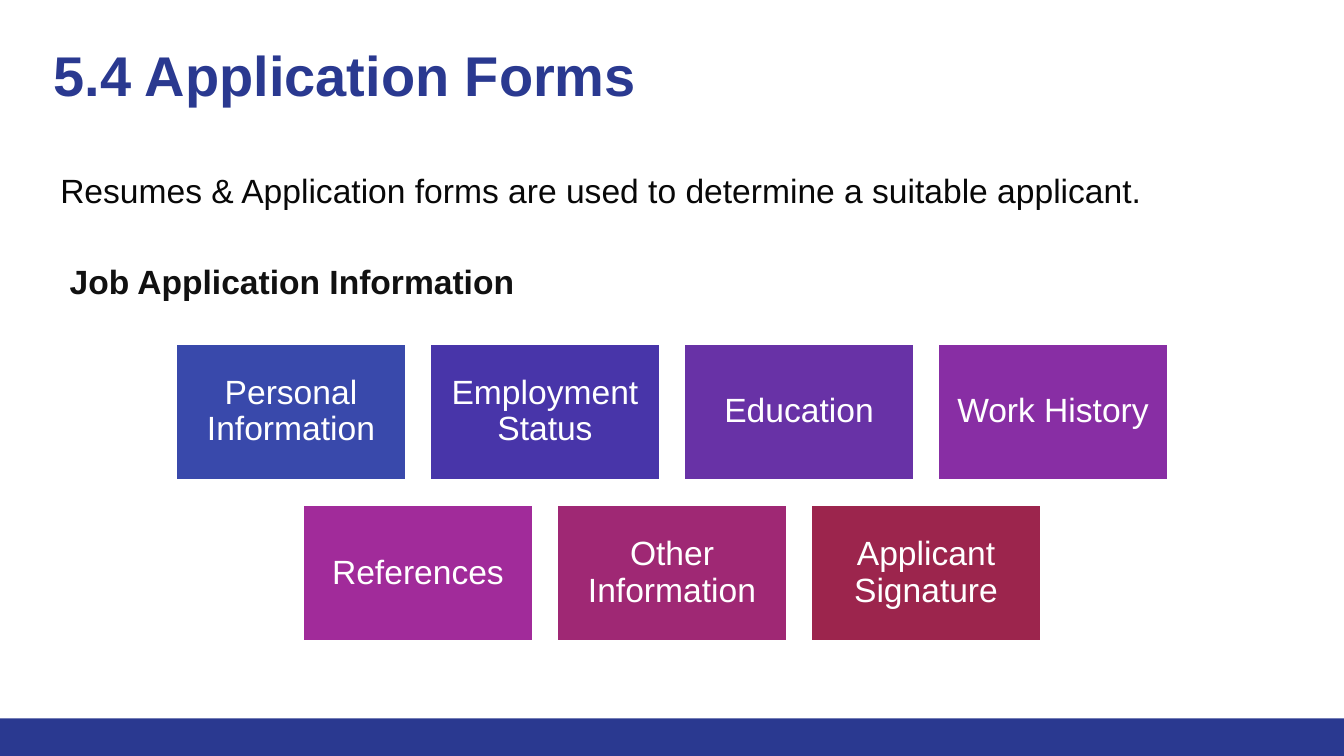
"""Build the slide on application forms."""
from pptx import Presentation
from pptx.dml.color import RGBColor
from pptx.enum.shapes import MSO_SHAPE
from pptx.enum.text import MSO_ANCHOR, MSO_AUTO_SIZE, PP_ALIGN
from pptx.util import Inches, Pt

WIDE = 10
HIGH = WIDE * 9 / 16
COLORS = {"navy": "2A3990", "body": "080808", "head": "111111", "white": "FFFFFF"}
TITLE = "5.4 Application Forms"
LINES = [
    ("Resumes & Application forms are used to determine a suitable applicant.", "body", False, 0.01, 0),
    ("Job Application Information", "head", True, 0.08, 24),
]
ROWS = [
    [("Personal Information", "3949AB"), ("Employment Status", "4835A9"),
     ("Education", "6832A6"), ("Work History", "882EA4")],
    [("References", "A12B9A"), ("Other Information", "9F2874"),
     ("Applicant Signature", "9C254D")],
]
CARD_W, CARD_H, GAP, TOP = 1.72, 1.03, 0.17, 2.55
BAR = 0.28


def style(para, size, color, bold=False):
    font = para.font
    font.name, font.size, font.bold = "Arial", Pt(size), bold
    font.color.rgb = RGBColor.from_string(color)


def frame(shape, inset, anchor):
    text = shape.text_frame
    text.word_wrap = True
    text.auto_size = MSO_AUTO_SIZE.NONE
    text.vertical_anchor = anchor
    text.margin_left = text.margin_right = Inches(inset)
    text.margin_top = text.margin_bottom = Inches(inset)
    return text


def block(slide, x, y, w, h, fill):
    shape = slide.shapes.add_shape(MSO_SHAPE.RECTANGLE, Inches(x), Inches(y), Inches(w), Inches(h))
    shape.shadow.inherit = False
    shape.fill.solid()
    shape.fill.fore_color.rgb = RGBColor.from_string(fill)
    shape.line.fill.background()
    return shape


def card(slide, x, y, label, fill):
    shape = block(slide, x, y, CARD_W, CARD_H, fill)
    shape.line.color.rgb = RGBColor.from_string(COLORS["white"])
    shape.line.width = Pt(2)
    text = frame(shape, 0.07, MSO_ANCHOR.MIDDLE)
    text.text = label
    para = text.paragraphs[0]
    para.alignment = PP_ALIGN.CENTER
    para.line_spacing = 0.9
    style(para, 18, COLORS["white"])


def main():
    deck = Presentation()
    deck.slide_width, deck.slide_height = Inches(WIDE), Inches(HIGH)
    slide = deck.slides.add_slide(deck.slide_layouts[5])
    block(slide, 0, HIGH - BAR, WIDE, BAR, COLORS["navy"])

    title = slide.shapes.title
    title.left, title.top, title.width, title.height = map(Inches, (0.3, 0.2, 9.32, 0.66))
    text = frame(title, 0.1, MSO_ANCHOR.TOP)
    text.text = TITLE
    text.paragraphs[0].alignment = PP_ALIGN.LEFT
    style(text.paragraphs[0], 30, COLORS["navy"], True)

    body = slide.shapes.add_textbox(*map(Inches, (0.34, 1.12, 9.22, 3.77)))
    text = frame(body, 0.1, MSO_ANCHOR.TOP)
    for i, (words, color, bold, indent, space) in enumerate(LINES):
        para = text.add_paragraph() if i else text.paragraphs[0]
        para.text = words
        para.line_spacing = 1.15
        para.space_before = Pt(space)
        para._p.get_or_add_pPr().set("marL", str(Inches(indent)))
        style(para, 18, COLORS[color], bold)

    for r, row in enumerate(ROWS):
        left = (WIDE - len(row) * (CARD_W + GAP) + GAP) / 2
        for c, (label, fill) in enumerate(row):
            card(slide, left + c * (CARD_W + GAP), TOP + r * (CARD_H + GAP), label, fill)
    deck.save("out.pptx")


if __name__ == "__main__":
    main()
